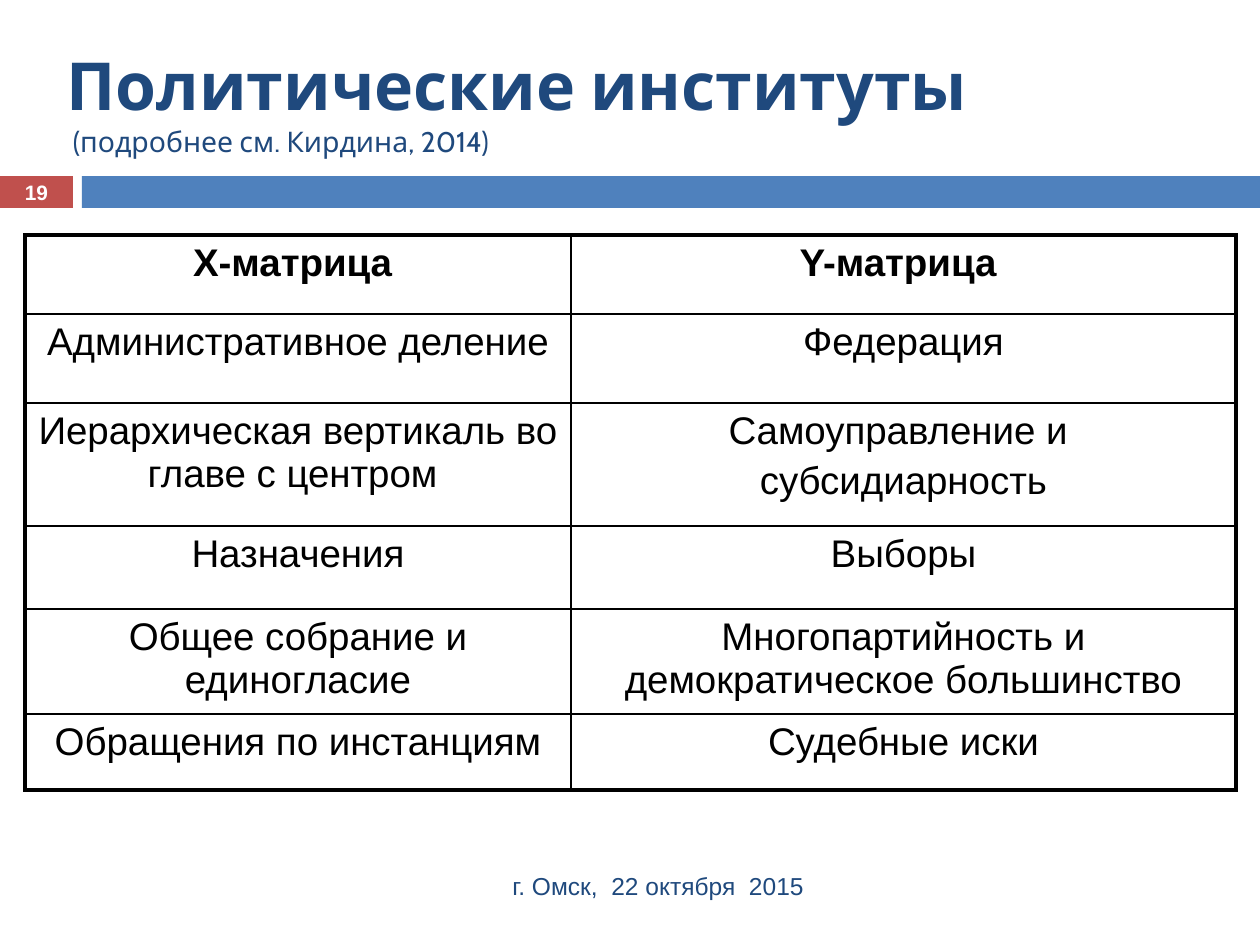
from lxml.etree import SubElement
from pptx import Presentation
from pptx.dml.color import RGBColor as RGB
from pptx.enum.shapes import MSO_SHAPE as SHAPE
from pptx.enum.text import MSO_ANCHOR as ANCHOR, PP_ALIGN as ALIGN
from pptx.oxml.ns import qn
from pptx.util import Emu, Pt

COLORS = {"navy": "1F497D", "blue": "4F81BD", "red": "C0504D",
          "black": "000000", "white": "FFFFFF"}
TITLE = [("Политические институты", 37.8, True),
         (" (подробнее см. Кирдина, 2014)", 16.2, False)]
FOOTER = "г. Омск,  22 октября  2015"
PAGE = "19"
BARS = [(0, 176, 73, 32, "red"), (82, 176, 1178, 32, "blue")]
ROWS = [
    ("Х-матрица ", "Y-матрица "),
    ("Административное деление", "Федерация"),
    ("Иерархическая вертикаль во главе с центром ",
     "Самоуправление и \nсубсидиарность"),
    ("Назначения", "Выборы"),
    ("Общее собрание и единогласие",
     "Многопартийность и демократическое большинство"),
    ("Обращения по инстанциям", "Судебные иски"),
]
COL_WIDTHS = [546, 665]
ROW_HEIGHTS = [79, 89, 123, 83, 69, 76]
THIN, THICK = 1, 2.25


def px(n):
    return Emu(round(n * 914400 / 126))


def rgb(name):
    return RGB.from_string(COLORS[name])


def write(p, text, size=22, color="black", bold=False, font="Arial",
          align=None, before=None):
    if align is not None:
        p.alignment = align
    if before is not None:
        p.space_before = Pt(before)
    r = p.add_run()
    r.text = text
    r.font.size = Pt(size)
    r.font.bold = bold
    r.font.name = font
    r.font.color.rgb = rgb(color)


def add_box(s, x, y, w, h):
    tf = s.shapes.add_textbox(px(x), px(y), px(w), px(h)).text_frame
    tf.word_wrap = True
    tf.vertical_anchor = ANCHOR.MIDDLE
    return tf


def set_borders(cell, widths):
    tc_pr = cell._tc.get_or_add_tcPr()
    for i, (side, width) in enumerate(widths.items()):
        ln = SubElement(tc_pr, qn("a:" + side), w=str(Pt(width)))
        fill = SubElement(ln, qn("a:solidFill"))
        SubElement(fill, qn("a:srgbClr"), val=COLORS["black"])
        tc_pr.insert(i, ln)


def add_matrix(s):
    n_rows, n_cols = len(ROWS), len(COL_WIDTHS)
    tbl = s.shapes.add_table(n_rows, n_cols, px(25), px(235),
                             px(sum(COL_WIDTHS)), px(sum(ROW_HEIGHTS))).table
    for col, w in zip(tbl.columns, COL_WIDTHS):
        col.width = px(w)
    for row, h in zip(tbl.rows, ROW_HEIGHTS):
        row.height = px(h)
    for i, texts in enumerate(ROWS):
        for j, text in enumerate(texts):
            cell = tbl.cell(i, j)
            cell.fill.background()
            set_borders(cell, {
                "lnL": THICK if j == 0 else THIN,
                "lnR": THICK if j == n_cols - 1 else THIN,
                "lnT": THICK if i == 0 else THIN,
                "lnB": THICK if i == n_rows - 1 else THIN,
            })
            tf = cell.text_frame
            for k, line in enumerate(text.split("\n")):
                p = tf.add_paragraph() if k else tf.paragraphs[0]
                write(p, line, bold=i == 0, align=ALIGN.CENTER, before=4.4)


def main():
    prs = Presentation()
    prs.slide_width, prs.slide_height = px(1260), px(945)
    s = prs.slides.add_slide(prs.slide_layouts[6])

    for x, y, w, h, color in BARS:
        sp = s.shapes.add_shape(SHAPE.RECTANGLE, px(x), px(y), px(w), px(h))
        sp.shadow.inherit = False
        sp.fill.solid()
        sp.fill.fore_color.rgb = rgb(color)
        sp.line.fill.background()

    p = add_box(s, 54, 37, 1155, 129).paragraphs[0]
    for i, (text, size, bold) in enumerate(TITLE):
        if i:
            p.add_line_break()
        write(p, text, size=size, bold=bold, color="navy", font="Cabin")

    add_matrix(s)

    tf = add_box(s, 84, 861, 747, 50)
    tf.margin_right = px(27)
    write(tf.paragraphs[0], FOOTER, size=14, color="navy", align=ALIGN.RIGHT)

    tf = add_box(s, 0, 175, 73, 34)
    write(tf.paragraphs[0], PAGE, size=11.9, color="white", bold=True,
          align=ALIGN.CENTER)

    prs.save("out.pptx")


if __name__ == "__main__":
    main()
